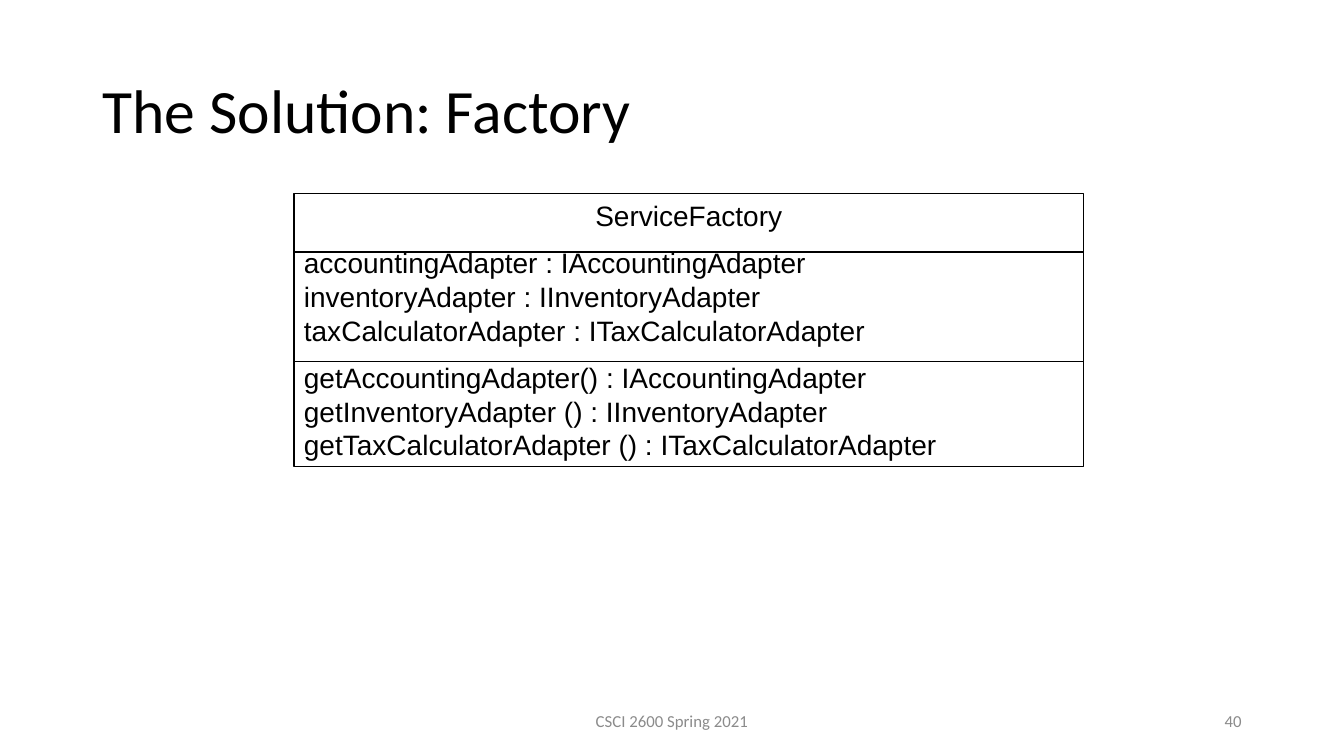
from dataclasses import dataclass

import pptx
import pptx.dml.color
import pptx.enum.shapes
import pptx.enum.text
import pptx.oxml.ns
import pptx.slide
import pptx.text.text
import pptx.util
from lxml import etree

Pt = pptx.util.Pt
Align = pptx.enum.text.PP_ALIGN
Anchor = pptx.enum.text.MSO_ANCHOR

BLACK = "000000"
GRAY = "8B8B8B"
LINE_WIDTH = 0.75

CLASS_LEFT, CLASS_TOP, CLASS_WIDTH, CLASS_HEIGHT = 210, 138, 564, 195
DIVIDER_TOPS = (180, 258)
CLASS_NAME = "ServiceFactory"
ATTRIBUTES = (
    "accountingAdapter : IAccountingAdapter",
    "inventoryAdapter : IInventoryAdapter",
    "taxCalculatorAdapter : ITaxCalculatorAdapter",
)
OPERATIONS = (
    "getAccountingAdapter() : IAccountingAdapter",
    "getInventoryAdapter () : IInventoryAdapter",
    "getTaxCalculatorAdapter () : ITaxCalculatorAdapter",
)


@dataclass(frozen=True)
class FooterItem:
    text: str
    left: float
    width: float
    alignment: Align


FOOTER_ITEMS = (
    FooterItem("CSCI 2600 Spring 2021", 318, 324, Align.CENTER),
    FooterItem("40", 678, 216, Align.RIGHT),
)


def color(hex_value: str) -> pptx.dml.color.RGBColor:
    return pptx.dml.color.RGBColor.from_string(hex_value)


def format_runs(
    paragraph: pptx.text.text._Paragraph, font_name: str, size: float, hex_value: str
) -> None:
    for run in paragraph.runs:
        run.font.name = font_name
        run.font.size = Pt(size)
        run.font.color.rgb = color(hex_value)


def add_title(slide: pptx.slide.Slide, text: str) -> None:
    title = slide.shapes.title
    title.left, title.top = Pt(66), Pt(28.8)
    title.width, title.height = Pt(828), Pt(104.4)
    title.text_frame.text = text
    title.text_frame.vertical_anchor = Anchor.MIDDLE
    paragraph = title.text_frame.paragraphs[0]
    paragraph.alignment = Align.LEFT
    paragraph.line_spacing = 0.9
    format_runs(paragraph, "Calibri", 44, BLACK)


def add_class_box(slide: pptx.slide.Slide) -> None:
    """Draw the class outline with its name, attributes and operations."""
    box = slide.shapes.add_shape(
        pptx.enum.shapes.MSO_SHAPE.RECTANGLE,
        Pt(CLASS_LEFT), Pt(CLASS_TOP), Pt(CLASS_WIDTH), Pt(CLASS_HEIGHT),
    )
    box.shadow.inherit = False
    box.fill.background()
    box.line.color.rgb = color(BLACK)
    box.line.width = Pt(LINE_WIDTH)
    frame = box.text_frame
    frame.word_wrap = True
    frame.vertical_anchor = Anchor.TOP
    sections = (CLASS_NAME, "\v".join(ATTRIBUTES), "\v".join(OPERATIONS))
    for index, section in enumerate(sections):
        paragraph = frame.add_paragraph() if index else frame.paragraphs[0]
        paragraph.text = section
        paragraph.alignment = Align.LEFT if index else Align.CENTER
        if index:
            paragraph.space_before = Pt(10)
        format_runs(paragraph, "Arial", 20, BLACK)


def add_divider(slide: pptx.slide.Slide, top: float) -> None:
    divider = slide.shapes.add_connector(
        pptx.enum.shapes.MSO_CONNECTOR.STRAIGHT,
        Pt(CLASS_LEFT), Pt(top), Pt(CLASS_LEFT + CLASS_WIDTH), Pt(top),
    )
    divider.line.color.rgb = color(BLACK)
    divider.line.width = Pt(LINE_WIDTH)
    etree.SubElement(divider._element.spPr, pptx.oxml.ns.qn("a:effectLst"))


def add_footer_item(slide: pptx.slide.Slide, item: FooterItem) -> None:
    box = slide.shapes.add_textbox(Pt(item.left), Pt(500.4), Pt(item.width), Pt(28.8))
    frame = box.text_frame
    frame.word_wrap = True
    frame.vertical_anchor = Anchor.MIDDLE
    frame.text = item.text
    paragraph = frame.paragraphs[0]
    paragraph.alignment = item.alignment
    format_runs(paragraph, "Calibri", 12, GRAY)


def main() -> None:
    presentation = pptx.Presentation()
    presentation.slide_width, presentation.slide_height = Pt(960), Pt(540)
    slide = presentation.slides.add_slide(presentation.slide_layouts[5])
    add_title(slide, "The Solution: Factory")
    add_class_box(slide)
    for top in DIVIDER_TOPS:
        add_divider(slide, top)
    for item in FOOTER_ITEMS:
        add_footer_item(slide, item)
    presentation.save("out.pptx")


if __name__ == "__main__":
    main()
